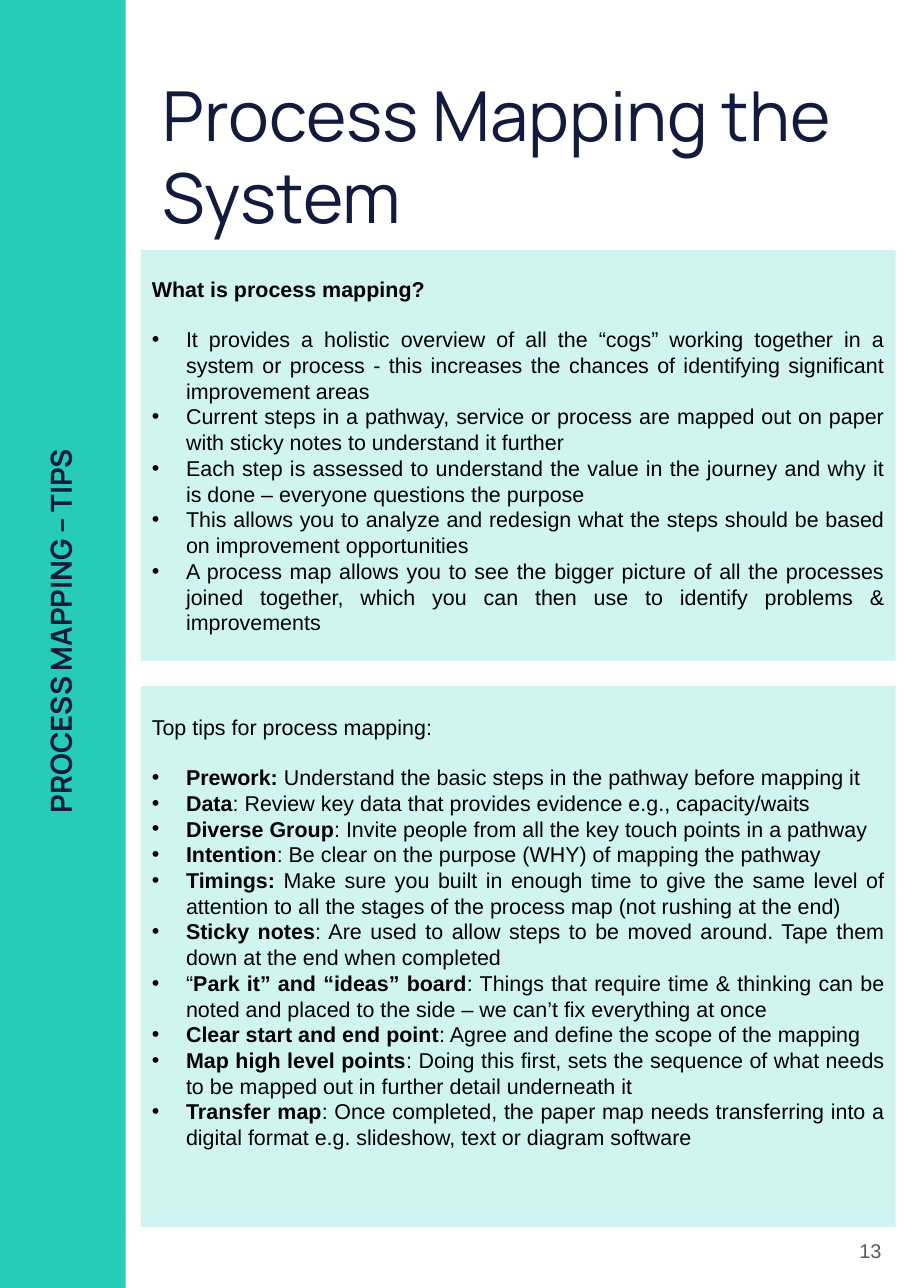
from dataclasses import dataclass

from lxml.etree import SubElement
from pptx import Presentation
from pptx.dml.color import RGBColor as Rgb
from pptx.enum.shapes import MSO_SHAPE as Shape
from pptx.enum.text import MSO_ANCHOR as Anchor, MSO_AUTO_SIZE as Fit, PP_ALIGN as Align
from pptx.oxml.ns import qn
from pptx.util import Cm, Pt


@dataclass(frozen=True)
class Theme:
    """Colours, fonts and type sizes of the page."""
    teal: str = "26CCB8"
    mint: str = "D0F5F1"
    navy: str = "121A3D"
    black: str = "000000"
    grey: str = "595959"
    head: str = "Manrope"
    body: str = "Arial"
    title: float = 45
    side: float = 19
    text: float = 14
    page: float = 13
    gap: float = 16.1
    pad: float = 0.25
    hang: float = 0.79


THEME = Theme()

FACTS = [
    "It provides a holistic overview of all the “cogs” working together in a system or process - this increases the chances of identifying significant improvement areas",
    "Current steps in a pathway, service or process are mapped out on paper with sticky notes to understand it further",
    "Each step is assessed to understand the value in the journey and why it is done – everyone questions the purpose",
    "This allows you to analyze and redesign what the steps should be based on improvement opportunities",
    "A process map allows you to see the bigger picture of all the processes joined together, which you can then use to identify problems & improvements",
]

TIPS = [
    "*Prework: *Understand the basic steps in the pathway before mapping it",
    "*Data*: Review key data that provides evidence e.g., capacity/waits",
    "*Diverse Group*: Invite people from all the key touch points in a pathway",
    "*Intention*: Be clear on the purpose (WHY) of mapping the pathway",
    "*Timings: *Make sure you built in enough time to give the same level of attention to all the stages of the process map (not rushing at the end)",
    "*Sticky notes*: Are used to allow steps to be moved around. Tape them down at the end when completed",
    "“*Park it” and “ideas” board*: Things that require time & thinking can be noted and placed to the side – we can’t fix everything at once",
    "*Clear start and end point*: Agree and define the scope of the mapping",
    "*Map high level points*: Doing this first, sets the sequence of what needs to be mapped out in further detail underneath it",
    "*Transfer map*: Once completed, the paper map needs transferring into a digital format e.g. slideshow, text or diagram software",
]


def style(item, **values):
    """Set each given attribute on the item."""
    for name, value in values.items():
        setattr(item, name, value)


def write(para, text, font, size, color, align=Align.LEFT):
    """Fill a paragraph, with bold for the parts between asterisks."""
    para.alignment = align
    for count, part in enumerate(text.split("*")):
        if part:
            run = para.add_run()
            run.text = part
            style(run.font, name=font, size=Pt(size), bold=count % 2 == 1)
            run.font.color.rgb = Rgb.from_string(color)


def frame(shape, pad, anchor=Anchor.TOP):
    """Prepare the text frame of a shape with equal insets."""
    text = shape.text_frame
    sides = ("left", "top", "right", "bottom")
    style(text, word_wrap=True, auto_size=Fit.NONE, vertical_anchor=anchor,
          **{f"margin_{side}": Cm(pad) for side in sides})
    return text


def block(slide, box, color):
    """Add a plain filled rectangle."""
    shape = slide.shapes.add_shape(Shape.RECTANGLE, *map(Cm, box))
    shape.shadow.inherit = False
    shape.fill.solid()
    shape.fill.fore_color.rgb = Rgb.from_string(color)
    shape.line.fill.background()
    return shape


def bullet(para):
    """Give a paragraph a hanging bullet."""
    props = para._p.get_or_add_pPr()
    hang = Cm(THEME.hang)
    props.set("marL", str(hang))
    props.set("indent", str(-hang))
    SubElement(props, qn("a:buFont")).set("typeface", THEME.body)
    SubElement(props, qn("a:buChar")).set("char", "•")


def title(slide, box, text):
    """Place and format the title placeholder."""
    shape = slide.shapes.title
    style(shape, **dict(zip(("left", "top", "width", "height"), map(Cm, box))))
    para = frame(shape, THEME.pad).paragraphs[0]
    write(para, text, THEME.head, THEME.title, THEME.navy)


def sidebar(slide, box, text):
    """Draw the side band with its upward running label."""
    left, top, width, height = box
    block(slide, box, THEME.teal)
    long, thick = 26.3, 1.32
    midx, midy = left + width / 2, top + height / 2 - 0.3
    label = slide.shapes.add_textbox(
        Cm(midx - long / 2), Cm(midy - thick / 2), Cm(long), Cm(thick))
    label.rotation = 270
    para = frame(label, THEME.pad).paragraphs[0]
    write(para, f"*{text}*", THEME.head, THEME.side, THEME.navy, Align.CENTER)


def panel(slide, box, head, items, foot=0.13):
    """Draw a tinted panel with a heading and a bullet list."""
    text = frame(block(slide, box, THEME.mint), THEME.pad, Anchor.MIDDLE)
    style(text, margin_top=Cm(0.13), margin_bottom=Cm(foot))
    first = text.paragraphs[0]
    write(first, head, THEME.body, THEME.text, THEME.black)
    first.space_after = Pt(THEME.gap)
    for item in items:
        para = text.add_paragraph()
        write(para, item, THEME.body, THEME.text, THEME.black, Align.JUSTIFY)
        bullet(para)


def folio(slide, box, text):
    """Place the page number."""
    shape = slide.shapes.add_textbox(*map(Cm, box))
    para = frame(shape, 0.33, Anchor.MIDDLE).paragraphs[0]
    write(para, text, THEME.body, THEME.page, THEME.grey, Align.RIGHT)


def main():
    """Build the page and save it."""
    deck = Presentation()
    style(deck, slide_width=Cm(21), slide_height=Cm(29.7))
    slide = deck.slides.add_slide(deck.slide_layouts.get_by_name("Title Only"))
    left, width = 3.25, 17.4
    sidebar(slide, (-0.1, 0, 3, 29.7), "PROCESS MAPPING – TIPS")
    title(slide, (3.5, 1.42, 17.15, 4.37), "Process Mapping the System")
    panel(slide, (left, 5.77, width, 9.47), "*What is process mapping?*", FACTS)
    panel(slide, (left, 15.82, width, 12.47), "Top tips for process mapping:", TIPS, 1.26)
    folio(slide, (19.38, 27.71, 1.27, 2.26), "13")
    deck.save("out.pptx")


if __name__ == "__main__":
    main()
